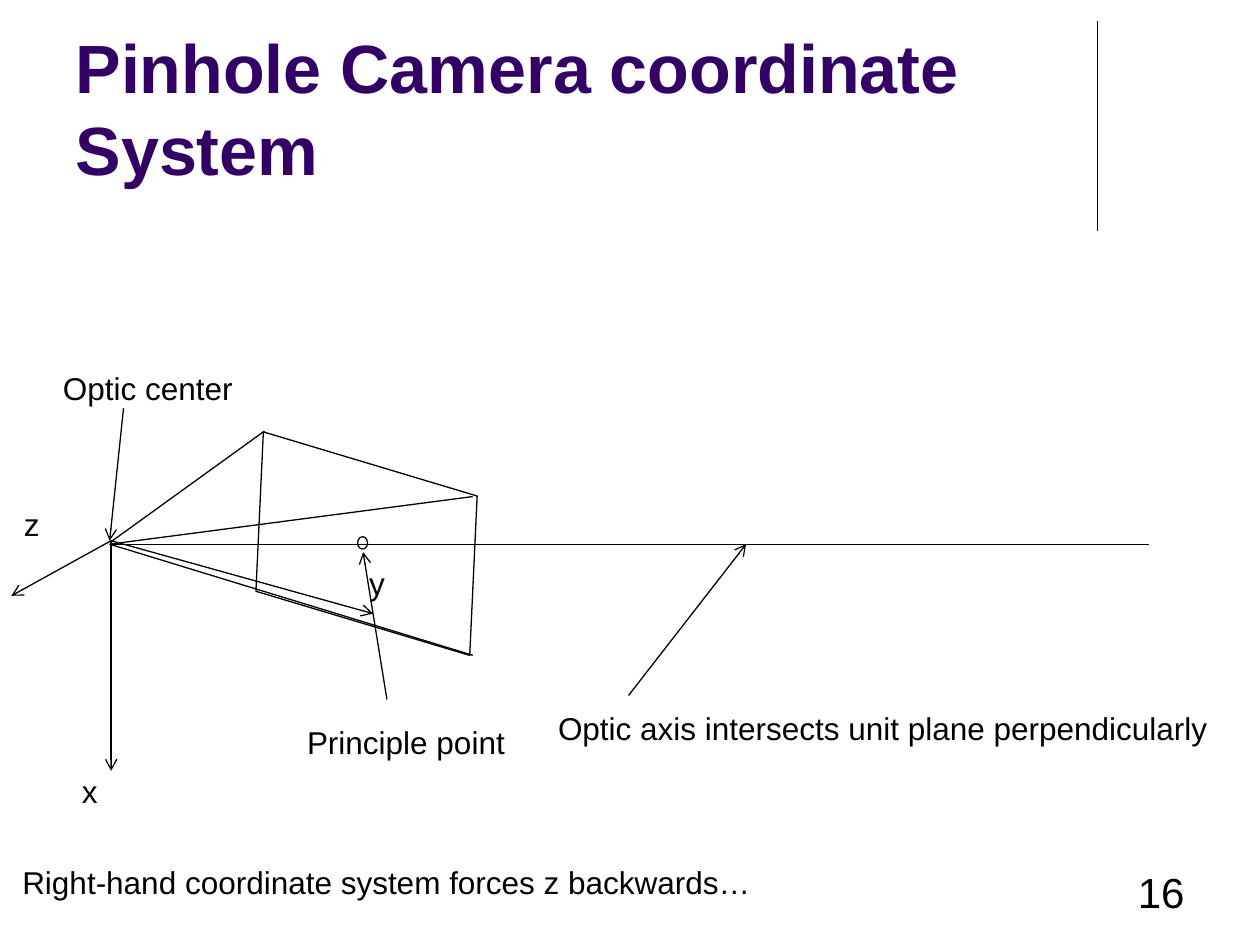
from dataclasses import dataclass

from pptx import Presentation
from pptx.dml.color import RGBColor
from pptx.enum.shapes import MSO_CONNECTOR, MSO_SHAPE
from pptx.enum.text import MSO_ANCHOR, MSO_AUTO_SIZE, PP_ALIGN
from pptx.oxml.ns import qn
from pptx.util import Cm, Pt
from lxml import etree

STRAIGHT = MSO_CONNECTOR.STRAIGHT
PARALLELOGRAM, OVAL = MSO_SHAPE.PARALLELOGRAM, MSO_SHAPE.OVAL
BOTTOM = MSO_ANCHOR.BOTTOM
FIT_SHAPE, NO_FIT = MSO_AUTO_SIZE.SHAPE_TO_FIT_TEXT, MSO_AUTO_SIZE.NONE
LEFT, RIGHT = PP_ALIGN.LEFT, PP_ALIGN.RIGHT


@dataclass(frozen=True)
class Theme:
    font: str = "Arial"
    ink: RGBColor = RGBColor(0, 0, 0)
    heading: RGBColor = RGBColor(0x33, 0, 0x66)
    paper: RGBColor = RGBColor(255, 255, 255)
    title_size: float = 39
    label_size: float = 18
    number_size: float = 24
    line_width: float = 0.75


class Deck:
    def __init__(self, theme, slide):
        self.theme = theme
        self.slide = slide
        fill = slide.background.fill
        fill.solid()
        fill.fore_color.rgb = theme.paper

    def run(self, p, text, size, color, bold=False):
        r = p.add_run()
        r.text = text
        r.font.name = self.theme.font
        r.font.size = Pt(size)
        r.font.bold = bold
        r.font.color.rgb = color

    def stroke(self, line):
        line.color.rgb = self.theme.ink
        line.width = Pt(self.theme.line_width)

    def title(self, text, x, y, w, h):
        sp = self.slide.shapes.title
        sp.left, sp.top, sp.width, sp.height = Cm(x), Cm(y), Cm(w), Cm(h)
        tf = sp.text_frame
        tf.word_wrap = True
        tf.auto_size = NO_FIT
        tf.vertical_anchor = BOTTOM
        p = tf.paragraphs[0]
        p.alignment = LEFT
        p.line_spacing = 1.0
        self.run(p, text, self.theme.title_size, self.theme.heading, True)

    def text_box(self, text, x, y, w, h, size, align, wrap, fit):
        tf = self.slide.shapes.add_textbox(Cm(x), Cm(y), Cm(w), Cm(h)).text_frame
        tf.word_wrap = wrap
        tf.auto_size = fit
        p = tf.paragraphs[0]
        p.alignment = align
        self.run(p, text, size, self.theme.ink)

    def label(self, text, x, y, w):
        self.text_box(text, x, y, w, 1.02, self.theme.label_size, LEFT, False, FIT_SHAPE)

    def number(self, text, x, y, w, h):
        self.text_box(text, x, y, w, h, self.theme.number_size, RIGHT, True, NO_FIT)

    def outline(self, kind, x, y, w, h, rotation=0, flip=False):
        sp = self.slide.shapes.add_shape(kind, Cm(x), Cm(y), Cm(w), Cm(h))
        sp.shadow.inherit = False
        sp.fill.background()
        self.stroke(sp.line)
        sp.rotation = rotation
        if flip:
            sp._element.spPr.find(qn("a:xfrm")).set("flipV", "1")

    def line(self, start, end, arrow=False):
        points = [Cm(v) for v in (*start, *end)]
        connector = self.slide.shapes.add_connector(STRAIGHT, *points)
        self.stroke(connector.line)
        if arrow:
            ln = connector.line._get_or_add_ln()
            etree.SubElement(ln, qn("a:tailEnd"), type="arrow")
        etree.SubElement(connector._element.spPr, qn("a:effectLst"))


def main():
    prs = Presentation()
    prs.slide_width, prs.slide_height = Cm(25.4), Cm(19.05)
    deck = Deck(Theme(), prs.slides.add_slide(prs.slide_layouts[5]))

    deck.line((22.12, 0.43), (22.12, 4.65))
    deck.title("Pinhole Camera coordinate System", 1.27, 0.33, 20.96, 3.61)
    deck.number("16", 18.21, 17.35, 5.92, 1.27)

    deck.outline(PARALLELOGRAM, 4.75, 9.4, 5.28, 3.12, rotation=16.7, flip=True)
    ray_start = (2.21, 10.97)
    optic_axis_end = (23.16, 10.97)
    deck.line((2.24, 10.92), (5.33, 8.69))
    for ray_end in [(9.53, 13.21), (9.53, 10.01), optic_axis_end]:
        deck.line(ray_start, ray_end)
    deck.outline(OVAL, 7.21, 10.82, 0.2, 0.25)

    optic_center = (2.24, 10.9)
    for axis_end in [(0.23, 12.01), (7.52, 12.37), (2.24, 15.54)]:
        deck.line(optic_center, axis_end, arrow=True)

    pointers = [
        ((2.49, 8.23), (2.21, 10.9)),
        ((12.67, 14.02), (15.04, 10.97)),
        ((7.8, 14.1), (7.32, 11.13)),
    ]
    for start, end in pointers:
        deck.line(start, end, arrow=True)

    labels = [
        ("Optic center", 1.02, 7.32, 3.96),
        ("Optic axis intersects unit plane perpendicularly", 11, 14.17, 13.74),
        ("x", 1.4, 15.44, 0.84),
        ("y", 7.19, 11.25, 0.84),
        ("z", 0.23, 10.06, 0.84),
        ("Principle point", 5.94, 14.45, 4.55),
        ("Right-hand coordinate system forces z backwards…", 0.2, 17.27, 15.21),
    ]
    for text, x, y, w in labels:
        deck.label(text, x, y, w)

    prs.save("out.pptx")


if __name__ == "__main__":
    main()
